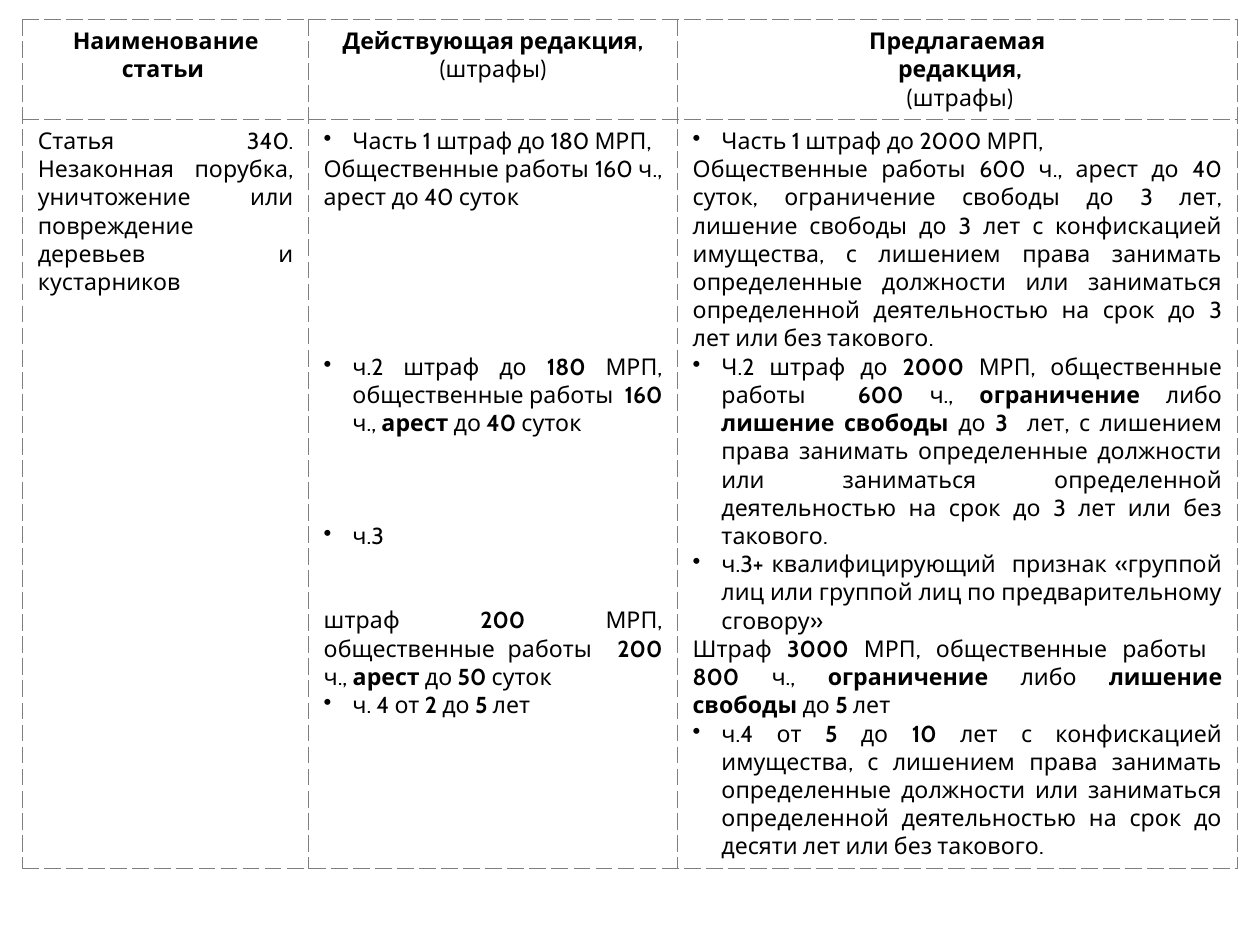
from dataclasses import dataclass

from pptx import Presentation
from pptx import oxml
from pptx import util as u
from pptx.dml.color import RGBColor
from pptx.enum import text
from pptx.oxml import ns


@dataclass(frozen=True)
class Theme:
    font: str = "Cabin"
    size: float = 11
    line_height: float = 13.42
    ink: str = "000000"
    paper: str = "FFFFFF"
    border: str = "7F7F7F"
    border_width: float = 0.75


theme = Theme()
INDENT = u.Inches(0.19)


def add_borders(cell):
    """Draw a dashed line on every side of a table cell."""
    properties = cell._tc.get_or_add_tcPr()
    for side in ("lnL", "lnR", "lnT", "lnB"):
        properties.append(oxml.parse_xml(
            f'<a:{side} {ns.nsdecls("a")} w="{u.Pt(theme.border_width)}">'
            f'<a:solidFill><a:srgbClr val="{theme.border}"/></a:solidFill>'
            f'<a:prstDash val="dash"/></a:{side}>'))


def write_paragraph(para, content, align, gap_lines=0):
    """Write one paragraph: a leading • makes a bullet, ** encloses bold words."""
    para.alignment = align
    para.font.name = theme.font
    para.font.size = u.Pt(theme.size)
    para.font.color.rgb = RGBColor.from_string(theme.ink)
    para.space_before = u.Pt(gap_lines * theme.line_height)
    if content.startswith("•"):
        content = content[1:]
        properties = para._p.get_or_add_pPr()
        properties.set("marL", str(INDENT))
        properties.set("indent", str(-INDENT))
        bullet = oxml.parse_xml(f'<a:buChar {ns.nsdecls("a")} char="•"/>')
        properties.find(ns.qn("a:defRPr")).addprevious(bullet)
    for index, piece in enumerate(content.split("**")):
        if piece:
            span = para.add_run()
            span.text = piece
            span.font.bold = index % 2 == 1


# Table wording: each paragraph is its text and the empty lines above it
ban = ("с лишением права занимать определенные должности или заниматься "
       "определенной деятельностью на срок до")
headings = [
    [("**Наименование статьи **", 0)],
    [("**Действующая редакция,**", 0), ("(штрафы)", 0)],
    [("**Предлагаемая**", 0), ("** редакция,**", 0), (" (штрафы)", 0)],
]
article = [("Статья 340. Незаконная порубка, уничтожение или повреждение "
            "деревьев и кустарников", 0)]
current = [
    ("•Часть 1 штраф до 180 МРП,", 0),
    ("Общественные работы 160 ч., арест до 40 суток", 0),
    ("•ч.2 штраф до **180** МРП, общественные работы  **160** ч., "
     "**арест** до **40** суток", 5),
    ("•ч.3", 3),
    ("штраф **200** МРП, общественные работы  **200** ч., "
     "**арест** до **50** суток", 2),
    ("•ч. 4 от **2** до **5** лет", 0),
]
proposed = [
    ("•Часть 1 штраф до 2000 МРП,", 0),
    ("Общественные работы 600 ч., арест до 40 суток, ограничение свободы "
     "до 3 лет, лишение свободы до 3 лет с конфискацией имущества, "
     f"{ban} 3 лет или без такового.", 0),
    ("•Ч.2 штраф до **2000** МРП, общественные работы  **600** ч., "
     "**ограничение** либо **лишение свободы** до **3 ** лет, "
     f"{ban} 3 лет или без такового.", 0),
    ("•ч.3+ квалифицирующий  признак «группой лиц или группой лиц по "
     "предварительному сговору»", 0),
    ("Штраф **3000** МРП, общественные работы  **800** ч., "
     "**ограничение** либо **лишение свободы** до **5** лет", 0),
    ("•ч.4 от **5** до **10** лет с конфискацией имущества, "
     f"{ban} десяти лет или без такового.", 0),
]
rows = [
    (0.66, text.PP_ALIGN.CENTER, headings),
    (4.94, text.PP_ALIGN.JUSTIFY, [article, current, proposed]),
]
column_widths = [1.89, 2.44, 3.7]

# Page
deck = Presentation()
deck.slide_width = u.Inches(8.33)
deck.slide_height = u.Inches(6.25)
page = deck.slides.add_slide(deck.slide_layouts.get_by_name("Blank"))

# Comparison table
table = page.shapes.add_table(
    len(rows), len(column_widths), u.Inches(0.15), u.Inches(0.13),
    u.Inches(sum(column_widths)), u.Inches(sum(row[0] for row in rows))).table
table.first_row = False
table.horz_banding = False
for column, width in zip(table.columns, column_widths):
    column.width = u.Inches(width)

for row, (height, align, contents) in zip(table.rows, rows):
    row.height = u.Inches(height)
    for cell, paragraphs in zip(row.cells, contents):
        add_borders(cell)
        cell.fill.solid()
        cell.fill.fore_color.rgb = RGBColor.from_string(theme.paper)
        frame = cell.text_frame
        for index, (content, gap_lines) in enumerate(paragraphs):
            para = frame.add_paragraph() if index else frame.paragraphs[0]
            write_paragraph(para, content, align, gap_lines)

deck.save("out.pptx")
